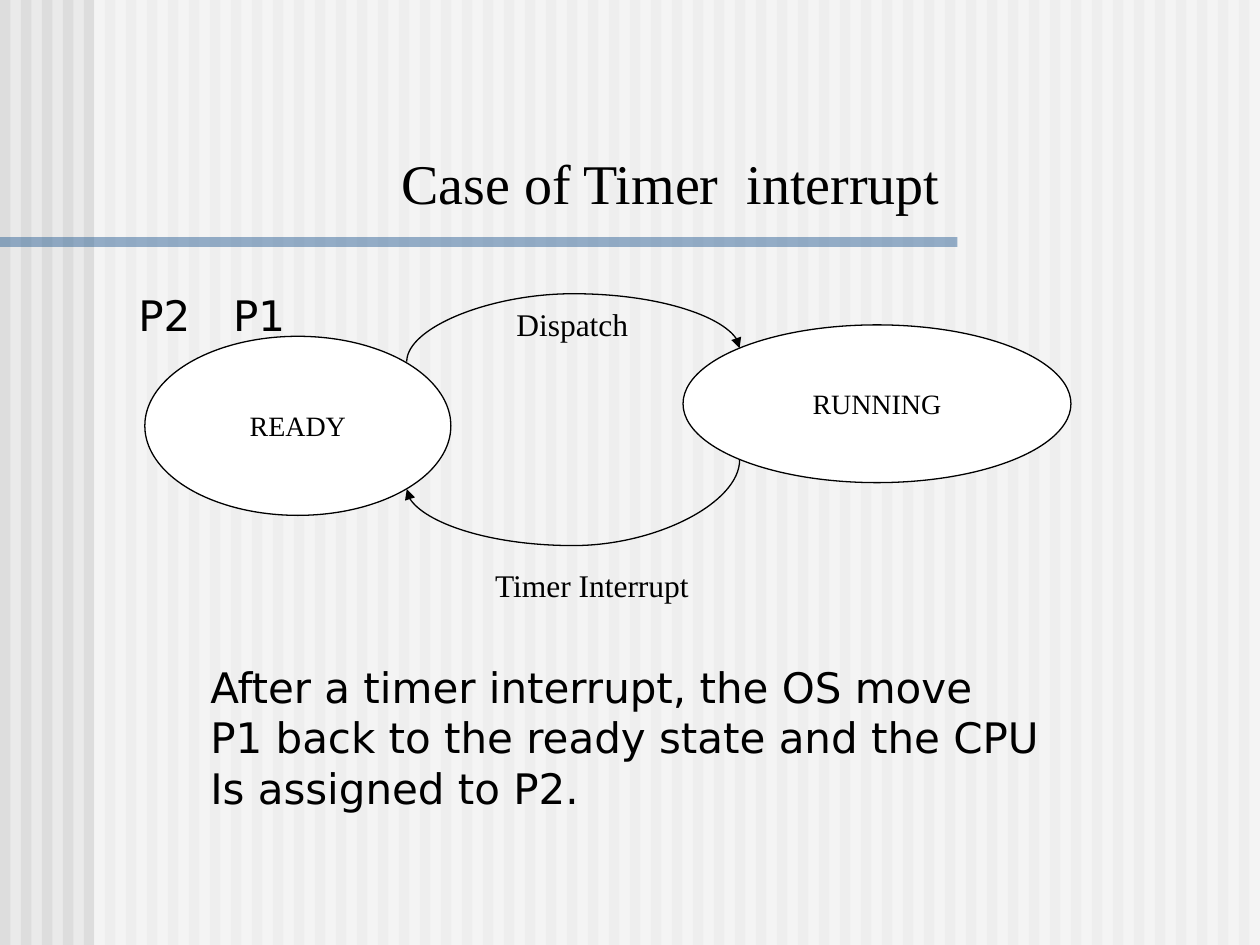
from lxml.etree import SubElement
from pptx import Presentation
from pptx.dml.color import RGBColor
from pptx.enum.shapes import MSO_CONNECTOR, MSO_SHAPE
from pptx.enum.text import MSO_ANCHOR, PP_ALIGN
from pptx.oxml.ns import qn
from pptx.util import Cm, Pt

BLACK = RGBColor(0x00, 0x00, 0x00)
WHITE = RGBColor(0xFF, 0xFF, 0xFF)
BACKGROUND = RGBColor(0xEA, 0xEA, 0xEA)
STRIPE = RGBColor(0xDD, 0xDD, 0xDD)
BLUE = RGBColor(0x33, 0x66, 0x99)

SERIF = "Times New Roman"
SANS = "DejaVu Sans"
WIDTH, HEIGHT = 25.4, 19.05
STRIPE_COUNT = 60


def add_bar(slide, left, top, width, height, color, opacity=100):
    bar = slide.shapes.add_shape(
        MSO_SHAPE.RECTANGLE, Cm(left), Cm(top), Cm(width), Cm(height))
    bar.shadow.inherit = False
    bar.fill.solid()
    bar.fill.fore_color.rgb = color
    bar.line.fill.background()
    if opacity < 100:
        color_element = bar.element.spPr.find(qn("a:solidFill"))[0]
        SubElement(color_element, qn("a:alpha"), val=str(opacity * 1000))


def add_backdrop(slide):
    """Stripes over the whole slide, paled by a veil right of the margin."""
    slide.background.fill.solid()
    slide.background.fill.fore_color.rgb = BACKGROUND
    pitch = WIDTH / STRIPE_COUNT
    for index in range(STRIPE_COUNT):
        add_bar(slide, index * pitch, 0, pitch / 2, HEIGHT, STRIPE)
    add_bar(slide, 1.9, 0, WIDTH - 1.9, HEIGHT, WHITE, opacity=50)
    add_bar(slide, 0, 4.78, 19.3, 0.2, BLUE, opacity=50)


def format_text(frame, size, font, align):
    for para in frame.paragraphs:
        para.alignment = align
        for span in para.runs:
            span.font.size = Pt(size)
            span.font.name = font
            span.font.color.rgb = BLACK


def add_state(slide, name, left, top, width, height):
    state = slide.shapes.add_shape(
        MSO_SHAPE.OVAL, Cm(left), Cm(top), Cm(width), Cm(height))
    state.shadow.inherit = False
    state.fill.solid()
    state.fill.fore_color.rgb = WHITE
    state.line.color.rgb = BLACK
    state.line.width = Pt(0.75)
    frame = state.text_frame
    frame.word_wrap = False
    frame.vertical_anchor = MSO_ANCHOR.MIDDLE
    frame.text = name
    format_text(frame, 16, SERIF, PP_ALIGN.CENTER)


def add_transition(slide, start, end, bend):
    """Curved arrow between two (x, y) points that swings out to height bend."""
    (x1, y1), (x2, y2) = start, end
    # The curve runs sideways, so it is laid out upright and then turned.
    across, along = abs(y2 - y1), abs(x2 - x1)
    left = (x1 + x2 - across) / 2
    top = (y1 + y2 - along) / 2
    arrow = slide.shapes.add_connector(
        MSO_CONNECTOR.CURVE, Cm(left), Cm(top),
        Cm(left + across), Cm(top + along))
    arrow.line.color.rgb = BLACK
    arrow.line.width = Pt(0.75)
    properties = arrow.element.spPr
    turn = 90 if x2 < x1 else 270
    properties.find(qn("a:xfrm")).set("rot", str(turn * 60000))
    adjustments = properties.find(qn("a:prstGeom")).find(qn("a:avLst"))
    depth = round(abs(bend - y1) / across * 100000)
    SubElement(adjustments, qn("a:gd"), name="adj1", fmla=f"val {depth}")
    SubElement(properties.find(qn("a:ln")), qn("a:tailEnd"), type="triangle")
    SubElement(properties, qn("a:effectLst"))


def add_text(slide, text, left, top, width, height, size, font,
             align=PP_ALIGN.LEFT, wrap=True):
    box = slide.shapes.add_textbox(Cm(left), Cm(top), Cm(width), Cm(height))
    frame = box.text_frame
    frame.word_wrap = wrap
    frame.text = text
    format_text(frame, size, font, align)


def main():
    deck = Presentation()
    deck.slide_width, deck.slide_height = Cm(WIDTH), Cm(HEIGHT)
    slide = deck.slides.add_slide(deck.slide_layouts[6])

    add_backdrop(slide)
    add_state(slide, "READY", 2.92, 6.78, 6.17, 3.61)
    add_state(slide, "RUNNING", 13.77, 6.55, 7.82, 3.18)
    add_transition(slide, (14.91, 9.27), (8.2, 9.86), bend=11)
    add_transition(slide, (8.2, 7.29), (14.91, 7.02), bend=5.92)

    add_text(slide, "Timer Interrupt", 9.73, 11.28, 4.45, 1.02, 18, SERIF)
    add_text(slide, "Dispatch", 10.16, 6.02, 4.24, 1.02, 18, SERIF)
    add_text(slide, "Case of Timer  interrupt", 6.22, 2.87, 14.6, 1.6,
             32, SERIF, PP_ALIGN.CENTER)
    for process, left in (("P1", 4.45), ("P2", 2.54)):
        add_text(slide, process, left, 5.72, 1.55, 1.27, 24, SANS, wrap=False)
    add_text(slide, "After a timer interrupt, the OS move\n"
                    "P1 back to the ready state and the CPU\n"
                    "Is assigned to P2.",
             3.99, 13.21, 17.37, 3.3, 24, SANS, wrap=False)

    deck.save("out.pptx")


if __name__ == "__main__":
    main()
